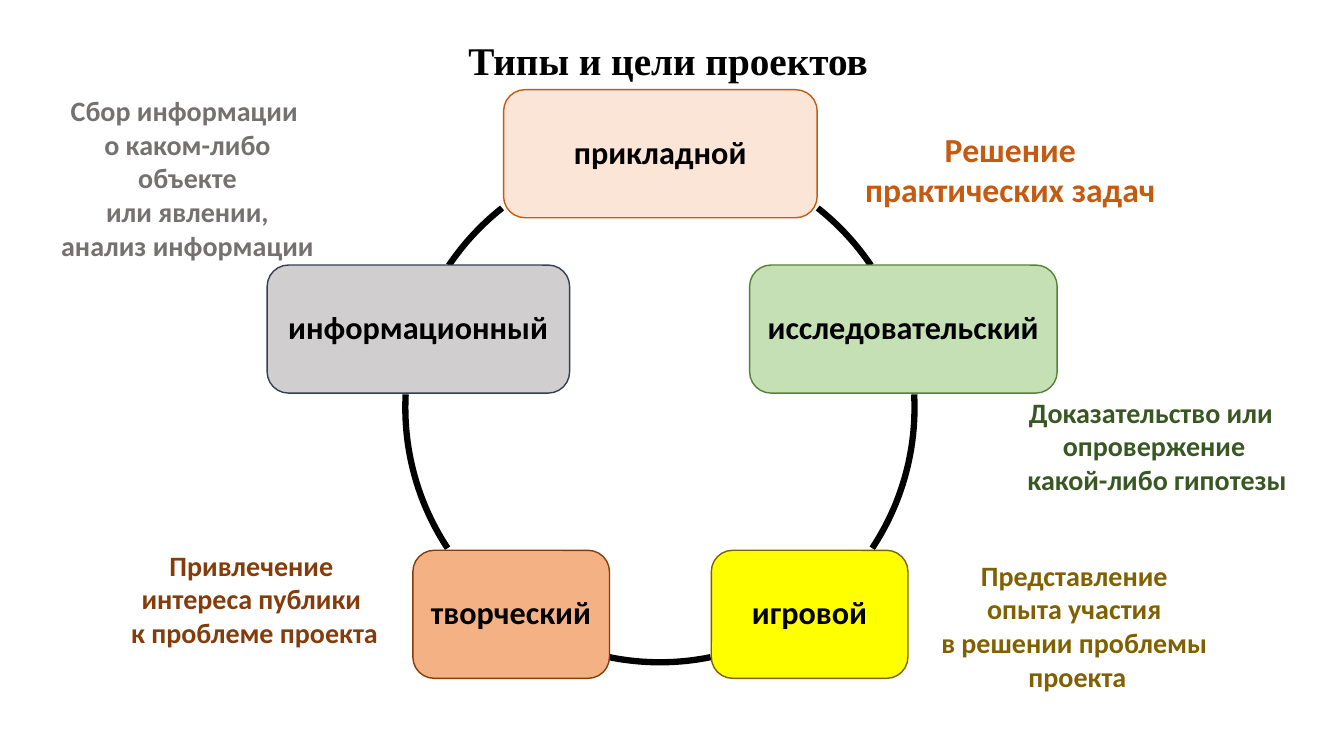
import dataclasses

import pptx
import pptx.dml.color
import pptx.enum.shapes
import pptx.enum.text
import pptx.util

Inches = pptx.util.Inches
Pt = pptx.util.Pt
SHAPES = pptx.enum.shapes.MSO_SHAPE
CENTER = pptx.enum.text.PP_ALIGN.CENTER
MIDDLE = pptx.enum.text.MSO_ANCHOR.MIDDLE
FIT_SHAPE = pptx.enum.text.MSO_AUTO_SIZE.SHAPE_TO_FIT_TEXT


def rgb(value):
    return pptx.dml.color.RGBColor.from_string(value)


@dataclasses.dataclass(frozen=True)
class Theme:
    body_font: str = "Calibri"
    title_font: str = "Times New Roman"
    title_size: int = 28
    type_size: int = 23
    lead_size: int = 24
    goal_size: int = 20
    ink: str = "000000"
    orange: str = "C55A11"
    orange_fill: str = "FBE5D6"
    green: str = "548235"
    green_dark: str = "385723"
    green_fill: str = "C5E0B4"
    gold: str = "806000"
    yellow_fill: str = "FFFF00"
    brown: str = "843C0B"
    brown_fill: str = "F4B183"
    navy: str = "333F50"
    grey: str = "767171"
    grey_fill: str = "D0CECE"
    box_line: float = 1
    ring_line: float = 4.5


class Deck:
    """Draws elements on the current slide in one theme."""

    def __init__(self, theme):
        self.theme = theme
        self.prs = pptx.Presentation()
        self.prs.slide_width = Inches(13.33)
        self.prs.slide_height = Inches(7.5)
        self.slide = self.prs.slides.add_slide(self.prs.slide_layouts[6])

    def add_lines(self, tf, lines, size, color, font, spacing):
        for i, line in enumerate(lines):
            p = tf.add_paragraph() if i else tf.paragraphs[0]
            p.alignment = CENTER
            p.line_spacing = spacing
            r = p.add_run()
            r.text = line
            style = {"name": font, "size": Pt(size), "bold": True}
            for key, value in style.items():
                setattr(r.font, key, value)
            r.font.color.rgb = rgb(color)

    def text(self, at, lines, size, color, font=None, spacing=1.0, wrap=True, left=0.1):
        tf = self.slide.shapes.add_textbox(*map(Inches, at)).text_frame
        frame = {"word_wrap": wrap, "auto_size": FIT_SHAPE, "margin_left": Inches(left)}
        for key, value in frame.items():
            setattr(tf, key, value)
        self.add_lines(tf, lines, size, color, font or self.theme.body_font, spacing)

    def outline(self, kind, at, color, width):
        sp = self.slide.shapes.add_shape(kind, *map(Inches, at))
        sp.shadow.inherit = False
        sp.line.color.rgb = rgb(color)
        sp.line.width = Pt(width)
        return sp

    def box(self, at, label, fill, line):
        t = self.theme
        sp = self.outline(SHAPES.ROUNDED_RECTANGLE, at, line, t.box_line)
        sp.fill.solid()
        sp.fill.fore_color.rgb = rgb(fill)
        margin = Inches(0.1)
        frame = {"word_wrap": True, "vertical_anchor": MIDDLE, "margin_left": margin,
                 "margin_right": margin, "margin_top": margin, "margin_bottom": margin}
        for key, value in frame.items():
            setattr(sp.text_frame, key, value)
        self.add_lines(sp.text_frame, [label], t.type_size, t.ink, t.body_font, 0.9)

    def arc(self, at, start, end):
        """Draw a clockwise arc; angles are degrees from the right-hand side."""
        sp = self.outline(SHAPES.ARC, at, self.theme.ink, self.theme.ring_line)
        sp.fill.background()
        for i, angle in enumerate((start, end)):
            sp.adjustments[i] = angle * 0.6  # 60000 units a degree, scaled by 100000


def main():
    t = Theme()
    deck = Deck(t)
    deck.text((4.02, 0.28, 4.71, 0.61), ["Типы и цели проектов"], t.title_size, t.ink,
              t.title_font, spacing=1.07, wrap=False, left=0.6)

    ring = (4.02, 1.52, 5.05, 5.05)
    for start, end in [(308.3, 326), (357, 33.5), (78.5, 101.5), (146.5, 183), (214, 231.7)]:
        deck.arc(ring, start, end)

    center_x, box_height = 6.55, 1.27
    project_types = [
        ("прикладной", center_x, 0.89, 3.11, t.orange_fill, t.orange),
        ("исследовательский", center_x + 2.41, 2.63, 3.05, t.green_fill, t.green),
        ("игровой", center_x + 1.48, 5.46, 1.95, t.yellow_fill, t.gold),
        ("творческий", center_x - 1.48, 5.46, 1.95, t.brown_fill, t.brown),
        ("информационный", center_x - 2.4, 2.63, 3.0, t.grey_fill, t.navy),
    ]
    for label, middle, top, width, fill, line in project_types:
        deck.box((middle - width / 2, top, width, box_height), label, fill, line)

    goals = [
        ((8.29, 1.23, 3.46, 1.21), ["Решение практических задач"],
         t.lead_size, t.orange, True),
        ((10.02, 3.87, 2.85, 1.11),
         ["Доказательство или ", "опровержение", " какой-либо гипотезы"],
         t.goal_size, t.green_dark, False),
        ((0.48, 0.88, 2.76, 1.78),
         ["Сбор информации ", "о каком-либо объекте", " или явлении, ", "анализ информации"],
         t.goal_size, t.grey, True),
        ((1.19, 5.39, 2.67, 1.11),
         ["Привлечение ", "интереса публики ", "к проблеме проекта"],
         t.goal_size, t.brown, False),
        ((9.2, 5.49, 2.91, 1.45),
         ["Представление", " опыта участия ", "в решении проблемы", " проекта"],
         t.goal_size, t.gold, True),
    ]
    for at, lines, size, color, wrap in goals:
        deck.text(at, lines, size, color, wrap=wrap)

    deck.prs.save("out.pptx")


if __name__ == "__main__":
    main()
